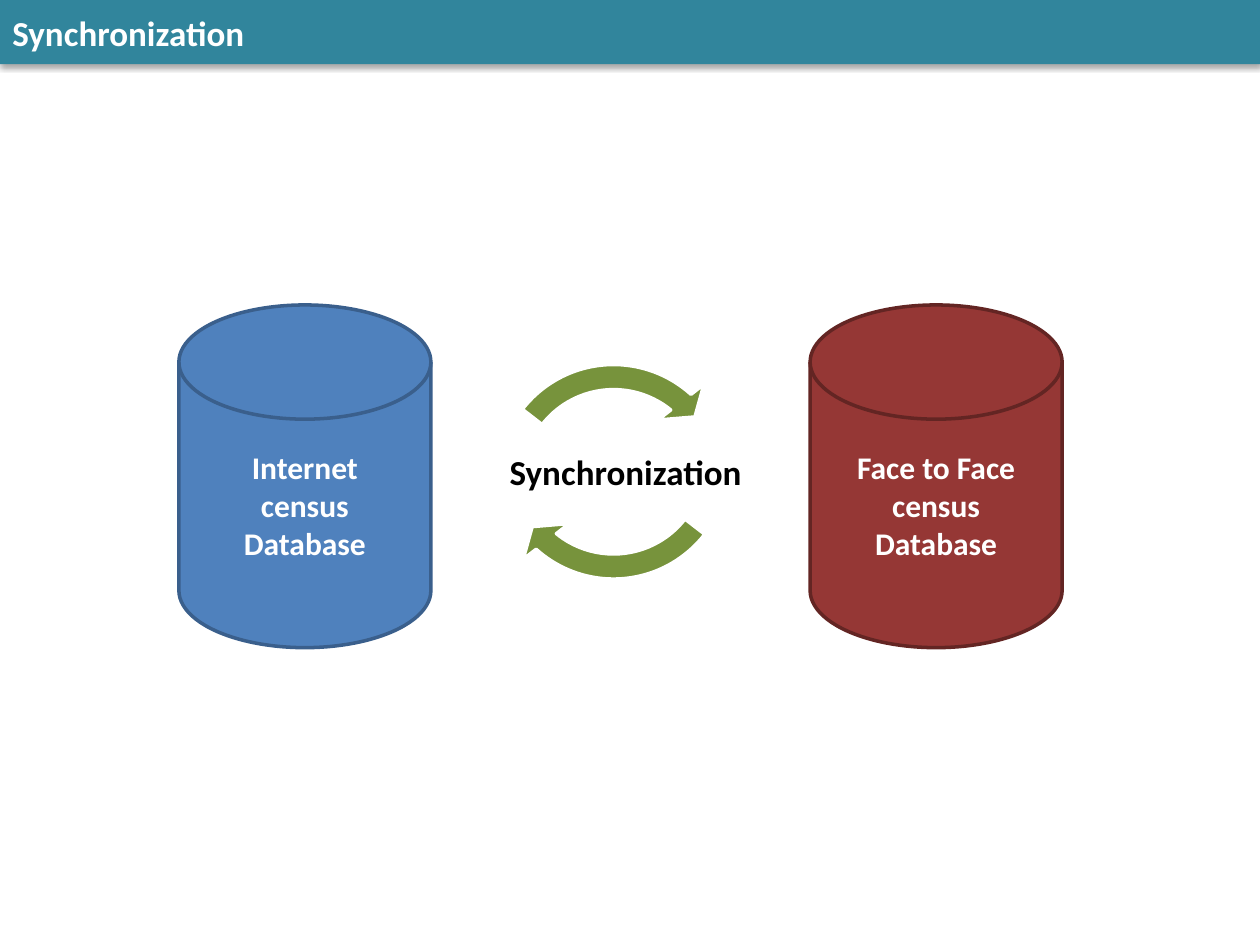
from lxml import etree
from pptx import Presentation
from pptx.dml.color import RGBColor
from pptx.enum.shapes import MSO_SHAPE
from pptx.enum.text import MSO_ANCHOR, PP_ALIGN
from pptx.oxml.ns import qn
from pptx.util import Pt

RECTANGLE = MSO_SHAPE.RECTANGLE
CYLINDER = MSO_SHAPE.FLOWCHART_MAGNETIC_DISK
CIRCULAR_ARROW = MSO_SHAPE.CIRCULAR_ARROW
MIDDLE = MSO_ANCHOR.MIDDLE
LEFT, CENTER = PP_ALIGN.LEFT, PP_ALIGN.CENTER


def color(value):
    return RGBColor.from_string(value)


class SlideBuilder:
    """Holds the style and the current slide."""

    font_name = "Calibri"
    white, black = "FFFFFF", "000000"
    header_fill, arrow_fill = "31859C", "77933C"

    def __init__(self, slide):
        self.slide = slide

    def add_text(self, shape, lines, size, text_color, alignment=CENTER, **paragraph_format):
        frame = shape.text_frame
        frame.word_wrap = True
        frame.vertical_anchor = MIDDLE
        for index, line in enumerate(lines):
            paragraph = frame.paragraphs[0] if index == 0 else frame.add_paragraph()
            for name, value in {"alignment": alignment, **paragraph_format}.items():
                setattr(paragraph, name, value)
            run = paragraph.add_run()
            run.text = line
            font_format = {"name": self.font_name, "size": Pt(size), "bold": True}
            for name, value in font_format.items():
                setattr(run.font, name, value)
            run.font.color.rgb = color(text_color)

    def shape(self, kind, box, fill, line=None):
        shape = self.slide.shapes.add_shape(kind, *map(Pt, box))
        shape.shadow.inherit = False
        shape.fill.solid()
        shape.fill.fore_color.rgb = color(fill)
        if line:
            shape.line.color.rgb = color(line)
            shape.line.width = Pt(2)
        else:
            shape.line.fill.background()
        return shape

    def header(self, text, box):
        bar = self.shape(RECTANGLE, box, self.header_fill)
        effects = bar._element.spPr.find(qn("a:effectLst"))
        shadow = etree.SubElement(effects, qn("a:outerShdw"), blurRad=str(Pt(3.1)),
                                  dist=str(Pt(1.8)), dir="5400000", rotWithShape="0")
        shade = etree.SubElement(shadow, qn("a:srgbClr"), val=self.black)
        etree.SubElement(shade, qn("a:alpha"), val="35000")
        self.add_text(bar, [text], 20, self.white, LEFT)

    def label(self, text, box):
        label = self.slide.shapes.add_textbox(*map(Pt, box))
        for side in ("left", "top", "right", "bottom"):
            setattr(label.text_frame, f"margin_{side}", Pt(2))
        self.add_text(label, [text], 20, self.black, line_spacing=0.9, space_after=Pt(7))

    def arrow(self, box, end_angle, start_angle):
        arrow = self.shape(CIRCULAR_ARROW, box, self.arrow_fill, self.white)
        for index, value in enumerate((0.095, 6.853, end_angle, start_angle, 0.111)):
            arrow.adjustments[index] = value

    def database(self, lines, box, fill, line):
        cylinder = self.shape(CYLINDER, box, fill, line)
        self.add_text(cylinder, lines, 18, self.white)


def main():
    presentation = Presentation()
    presentation.slide_width, presentation.slide_height = Pt(720), Pt(540)
    builder = SlideBuilder(presentation.slides.add_slide(presentation.slide_layouts[6]))

    # Title bar
    builder.header("Synchronization", (0, 0, 720, 36.72))

    # Synchronization cycle: lower arrow, then upper arrow
    builder.label("Synchronization", (264.24, 234, 186.48, 73.44))
    for top, end_angle, start_angle in ((189.36, 78.49, 22.66),
                                        (198.72, 186.49, 130.66)):
        builder.arrow((275.04, top, 151.2, 151.2), end_angle, start_angle)

    # Databases
    for left, lines, fill, line in (
        (102.24, ["Internet", "census", "Database"], "4F81BD", "3A5F8C"),
        (462.96, ["Face to Face census", "Database"], "953735", "632523"),
    ):
        builder.database(lines, (left, 174.24, 144, 195.84), fill, line)

    presentation.save("out.pptx")


if __name__ == "__main__":
    main()
